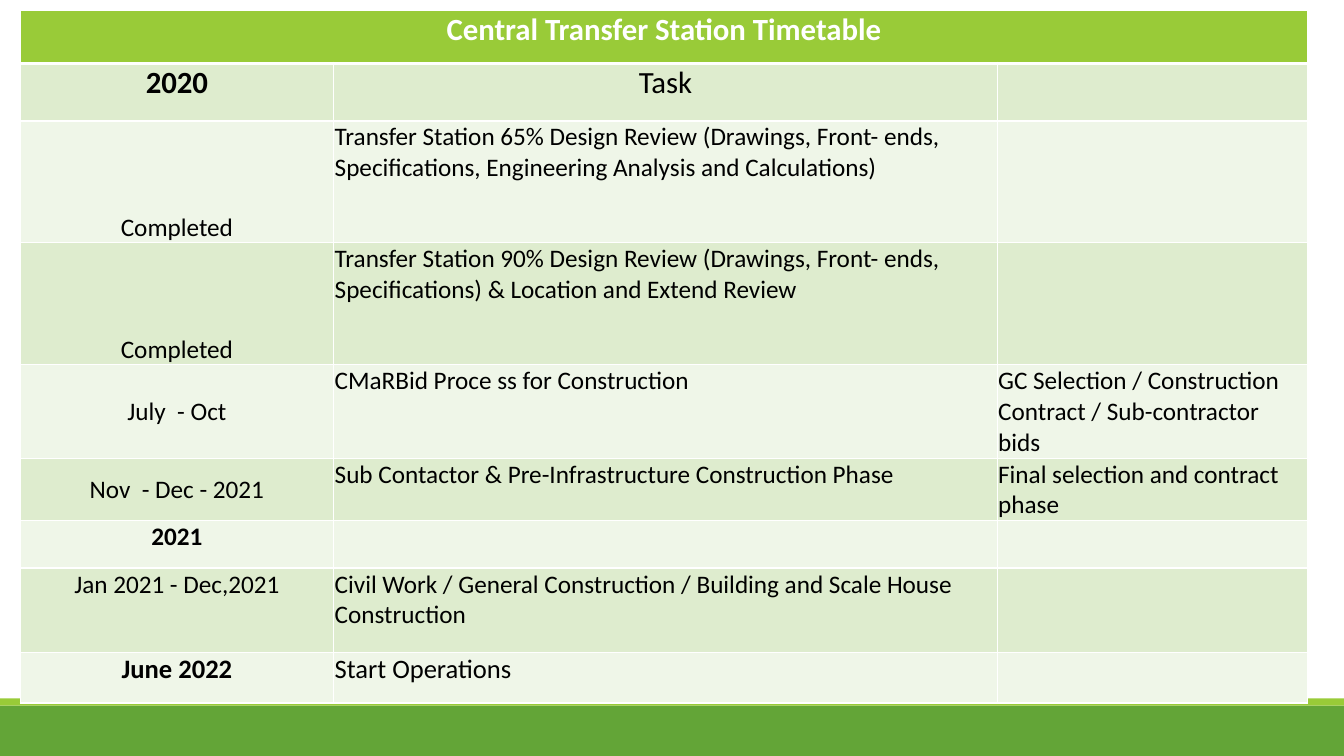
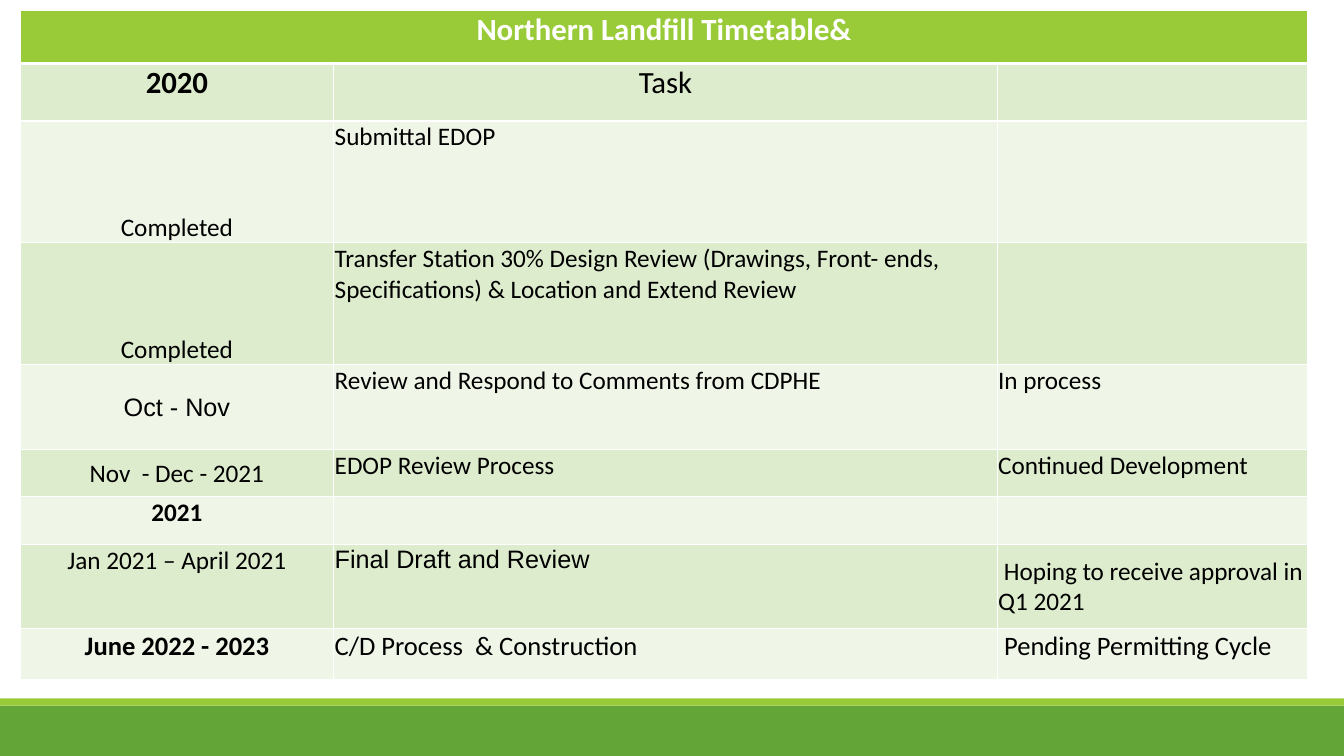
"""Build two project timetable slides that share a table design and footer bands."""
import pptx
import pptx.dml.color
import pptx.enum.shapes
import pptx.enum.text
import pptx.oxml
import pptx.oxml.ns
import pptx.util
from pptx.util import Inches

RGBColor = pptx.dml.color.RGBColor
ANCHOR = pptx.enum.text.MSO_ANCHOR
ALIGN = pptx.enum.text.PP_ALIGN

WHITE = RGBColor(0xFF, 0xFF, 0xFF)
BLACK = RGBColor(0x00, 0x00, 0x00)
LIME = RGBColor(0x99, 0xCB, 0x38)
GREEN = RGBColor(0x63, 0xA5, 0x37)
TINTS = (RGBColor(0xDE, 0xEC, 0xCE), RGBColor(0xEF, 0xF6, 0xE8))

SLIDE_WIDTH, SLIDE_HEIGHT = 13.33, 7.5
TABLE_LEFT, TABLE_TOP = 0.2, 0.1
COLUMN_WIDTHS = (3.11, 6.58, 3.08)
FOOTER_BANDS = ((7, 0.5, GREEN), (6.93, 0.07, LIME))

ROW_STYLES = (
    {"height": 0.53, "size": 22, "bold": True},
    {"height": 0.57, "size": 22, "bold": True},
    {"height": 1.21, "anchor": ANCHOR.BOTTOM},
    {"height": 1.21, "anchor": ANCHOR.BOTTOM},
    {"height": 0.84, "anchor": ANCHOR.MIDDLE},
    {"height": 0.47, "anchor": ANCHOR.MIDDLE},
    {"height": 0.47, "bold": True},
    {"height": 0.84},
    {"height": 0.5, "size": 19, "bold": True},
)

TIMETABLES = (
    {
        "rows": (
            ("Central Transfer Station Timetable", "", ""),
            ("2020", "Task", ""),
            ("Completed", "Transfer Station 65% Design Review (Drawings, Front- ends, "
             "Specifications, Engineering Analysis and Calculations)", ""),
            ("Completed", "Transfer Station 90% Design Review (Drawings, Front- ends,\n"
             "Specifications) & Location and Extend Review", ""),
            ("July  - Oct", "CMaRBid Proce ss for Construction",
             "GC Selection / Construction Contract / Sub-contractor bids"),
            ("Nov  - Dec - 2021", "Sub Contactor & Pre-Infrastructure Construction Phase",
             "Final selection and contract phase"),
            ("2021", "", ""),
            ("Jan 2021 - Dec,2021",
             "Civil Work / General Construction / Building and Scale House Construction", ""),
            ("June 2022", "Start Operations", ""),
        ),
        "exceptions": {},
    },
    {
        "rows": (
            ("Northern Landfill Timetable&", "", ""),
            ("2020", "Task", ""),
            ("Completed", "Submittal EDOP", ""),
            ("Completed", "Transfer Station 30% Design Review (Drawings, Front- ends,\n"
             "Specifications) & Location and Extend Review", ""),
            ("Oct - Nov", "Review and Respond to Comments from CDPHE", "In process"),
            ("Nov  - Dec - 2021", "EDOP Review Process", "Continued Development"),
            ("2021", "", ""),
            ("Jan 2021 – April 2021", "Final Draft and Review",
             " Hoping to receive approval in Q1 2021"),
            ("June 2022 - 2023", "C/D Process  & Construction", " Pending Permitting Cycle"),
        ),
        "exceptions": {
            (4, 0): {"font": "Arial"},
            (7, 1): {"font": "Arial"},
            (7, 2): {"anchor": ANCHOR.MIDDLE},
        },
    },
)


def write_text(cell, text, size=18, bold=False, color=BLACK, font="Calibri",
               align=ALIGN.LEFT, anchor=ANCHOR.TOP):
    cell.margin_left = cell.margin_top = cell.margin_right = Inches(0.01)
    cell.margin_bottom = 0
    cell.vertical_anchor = anchor
    paragraph = cell.text_frame.paragraphs[0]
    paragraph.text = text
    paragraph.alignment = align
    for run in paragraph.runs:
        run.font.size = pptx.util.Pt(size)
        run.font.bold = bold
        run.font.name = font
        run.font.color.rgb = color


def add_borders(cell, top=1, bottom=1):
    properties = cell._tc.get_or_add_tcPr()
    for side, points in (("L", 1), ("R", 1), ("T", top), ("B", bottom)):
        properties.append(pptx.oxml.parse_xml(
            f'<a:ln{side} {pptx.oxml.ns.nsdecls("a")} w="{pptx.util.Pt(points)}">'
            f'<a:solidFill><a:srgbClr val="{WHITE}"/></a:solidFill></a:ln{side}>'))


def add_footer_bands(slide):
    layout_shapes = slide.slide_layout.shapes.element
    for top, height, color in FOOTER_BANDS:
        band = slide.shapes.add_shape(
            pptx.enum.shapes.MSO_SHAPE.RECTANGLE, 0, Inches(top),
            Inches(SLIDE_WIDTH), Inches(height))
        band.shadow.inherit = False
        band.fill.solid()
        band.fill.fore_color.rgb = color
        band.line.fill.background()
        layout_shapes.append(band.element)


def add_timetable(slide, rows, exceptions):
    table = slide.shapes.add_table(
        len(rows), len(COLUMN_WIDTHS), Inches(TABLE_LEFT), Inches(TABLE_TOP),
        Inches(sum(COLUMN_WIDTHS)),
        Inches(sum(style["height"] for style in ROW_STYLES))).table
    for column, width in zip(table.columns, COLUMN_WIDTHS):
        column.width = Inches(width)
    table.cell(0, 0).merge(table.cell(0, len(COLUMN_WIDTHS) - 1))

    for row_index, (texts, style) in enumerate(zip(rows, ROW_STYLES)):
        table.rows[row_index].height = Inches(style["height"])
        is_title = row_index == 0
        for column_index, text in enumerate(texts):
            cell = table.cell(row_index, column_index)
            add_borders(cell, top=3 if row_index == 1 else 1, bottom=3 if is_title else 1)
            cell.fill.solid()
            cell.fill.fore_color.rgb = LIME if is_title else TINTS[(row_index - 1) % 2]
            if not text:
                continue
            text_format = {"size": style.get("size", 18),
                           "color": WHITE if is_title else BLACK}
            if column_index == 0:
                text_format["bold"] = style.get("bold", False)
                text_format["anchor"] = style.get("anchor", ANCHOR.TOP)
            if column_index == 0 or row_index < 2:
                text_format["align"] = ALIGN.CENTER
            text_format.update(exceptions.get((row_index, column_index), {}))
            write_text(cell, text, **text_format)


def main():
    presentation = pptx.Presentation()
    presentation.slide_width = Inches(SLIDE_WIDTH)
    presentation.slide_height = Inches(SLIDE_HEIGHT)
    blank_layout = presentation.slide_layouts[6]
    slides = [presentation.slides.add_slide(blank_layout) for _ in TIMETABLES]
    add_footer_bands(slides[0])
    for slide, timetable in zip(slides, TIMETABLES):
        add_timetable(slide, **timetable)
    presentation.save("out.pptx")


if __name__ == "__main__":
    main()
